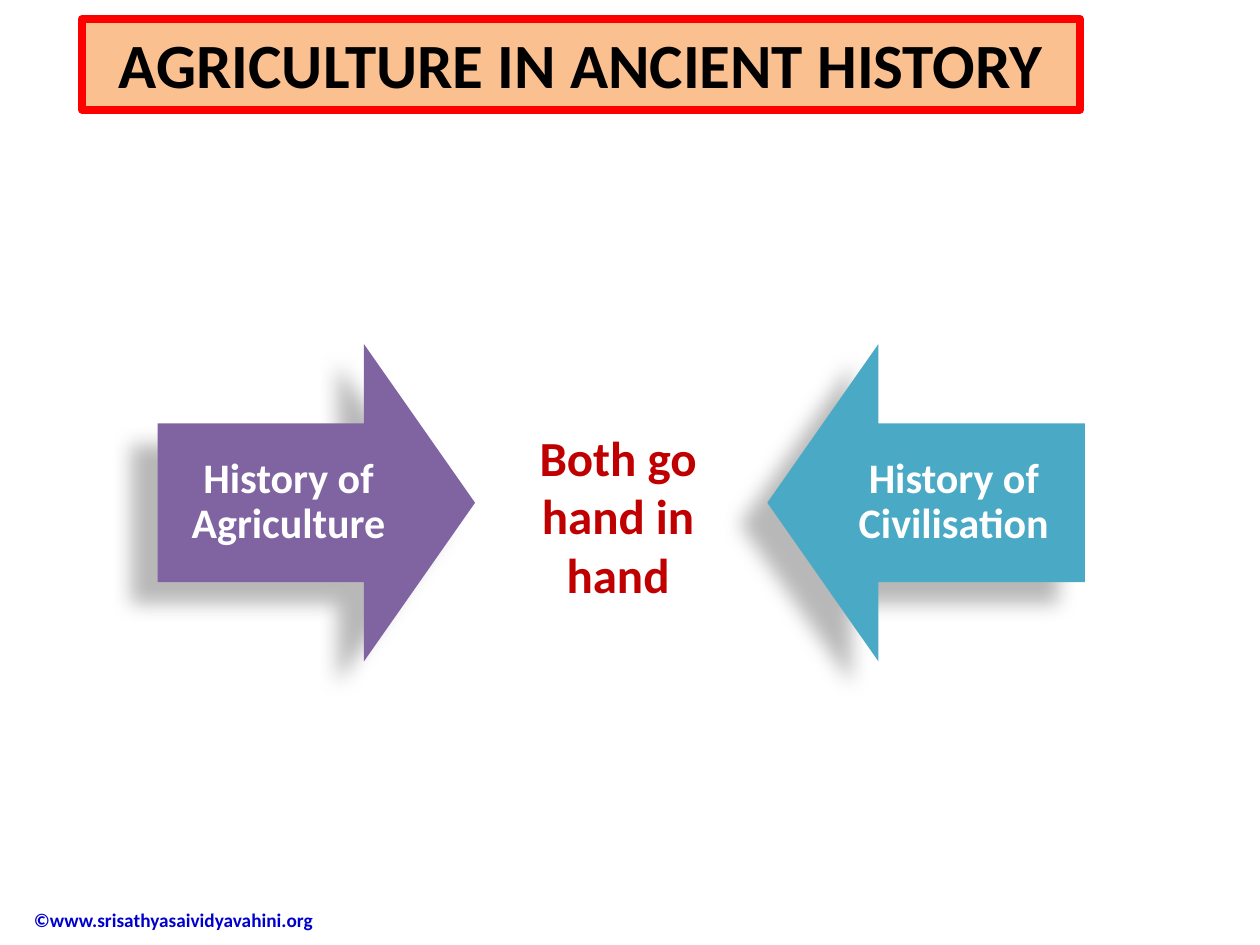
import pptx
import pptx.dml.color
import pptx.enum.shapes
import pptx.enum.text
import pptx.oxml
import pptx.oxml.ns
import pptx.util

Inches, Pt = pptx.util.Inches, pptx.util.Pt
RGBColor = pptx.dml.color.RGBColor
SHAPE = pptx.enum.shapes.MSO_SHAPE
ALIGN = pptx.enum.text.PP_ALIGN
ANCHOR = pptx.enum.text.MSO_ANCHOR

WIDTH, HEIGHT = 10, 7.5
BLACK = RGBColor(0x00, 0x00, 0x00)
WHITE = RGBColor(0xFF, 0xFF, 0xFF)
RED = RGBColor(0xFF, 0x00, 0x00)
DARK_RED = RGBColor(0xC0, 0x00, 0x00)
PEACH = RGBColor(0xFA, 0xC0, 0x90)
PURPLE = RGBColor(0x80, 0x64, 0xA2)
TEAL = RGBColor(0x4A, 0xA9, 0xC5)
BLUE = RGBColor(0x00, 0x00, 0xCC)

TITLE = "AGRICULTURE IN ANCIENT HISTORY"
MESSAGE = "Both go hand in hand"
FOOTER = "©www.srisathyasaividyavahini.org"

ARROW = 0.252 * WIDTH
ARROW_TOP = 0.364 * HEIGHT
LABEL_WIDTH = 2.08
# label, fill, rotation, arrow left, label offset within the arrow
ARROWS = [
    ("History of Agriculture", PURPLE, 270, 1.25, 0),
    ("History of Civilisation", TEAL, 90, 6.09, ARROW - LABEL_WIDTH),
]


def write(shape, text, size, color, align=ALIGN.CENTER, anchor=ANCHOR.MIDDLE,
          spacing=None, inset=None):
    frame = shape.text_frame
    frame.word_wrap = True
    frame.vertical_anchor = anchor
    if inset is not None:
        frame.margin_left = frame.margin_right = Inches(inset)
        frame.margin_top = frame.margin_bottom = Inches(inset)
    para = frame.paragraphs[0]
    para.alignment = align
    if spacing:
        para.line_spacing = spacing
    span = para.add_run()
    span.text = text
    span.font.name = "Calibri"
    span.font.size = Pt(size)
    span.font.bold = True
    span.font.color.rgb = color


def add_box(page, left, top, width, height):
    return page.shapes.add_textbox(*map(Inches, (left, top, width, height)))


def add_solid(page, kind, fill, left, top, width, height):
    shape = page.shapes.add_shape(kind, *map(Inches, (left, top, width, height)))
    shape.shadow.inherit = False
    shape.fill.solid()
    shape.fill.fore_color.rgb = fill
    shape.line.fill.background()
    return shape


def cast_shadow(shape):
    """Soft shadow to the lower left that ignores the shape's rotation."""
    effects = shape.element.spPr.find(pptx.oxml.ns.qn("a:effectLst"))
    effects.append(pptx.oxml.parse_xml(
        f'<a:outerShdw {pptx.oxml.ns.nsdecls("a")} blurRad="{Pt(11.8)}" '
        f'dist="{Pt(19.7)}" dir="{141 * 60000}" algn="ctr" rotWithShape="0">'
        f'<a:srgbClr val="{BLACK}"><a:alpha val="28000"/></a:srgbClr>'
        '</a:outerShdw>'))


def main():
    deck = pptx.Presentation()
    deck.slide_width, deck.slide_height = Inches(WIDTH), Inches(HEIGHT)
    page = deck.slides.add_slide(deck.slide_layouts[6])

    footer = add_box(page, 0.17, 7.1, 2.52, 0.41 - 0.01)
    write(footer, FOOTER, 11, BLUE, ALIGN.LEFT)

    banner = add_solid(page, SHAPE.RECTANGLE, PEACH, 0.65, 0.15, 7.92, 0.72)
    banner.line.color.rgb = RED
    banner.line.width = Pt(4.5)
    write(banner, TITLE, 36, BLACK, anchor=ANCHOR.TOP)

    for text, fill, rotation, left, offset in ARROWS:
        arrow = add_solid(page, SHAPE.DOWN_ARROW, fill, left, ARROW_TOP, ARROW, ARROW)
        arrow.rotation = rotation
        arrow.adjustments[0], arrow.adjustments[1] = 0.5, 0.35
        cast_shadow(arrow)
        label = add_box(page, left + offset, ARROW_TOP + ARROW / 4, LABEL_WIDTH, ARROW / 2)
        write(label, text, 24, WHITE, spacing=0.9, inset=0.19)

    message = add_box(page, 3.81, 3.43, 2.19, 1.32)
    write(message, MESSAGE, 28, DARK_RED)

    deck.save("out.pptx")


if __name__ == "__main__":
    main()
